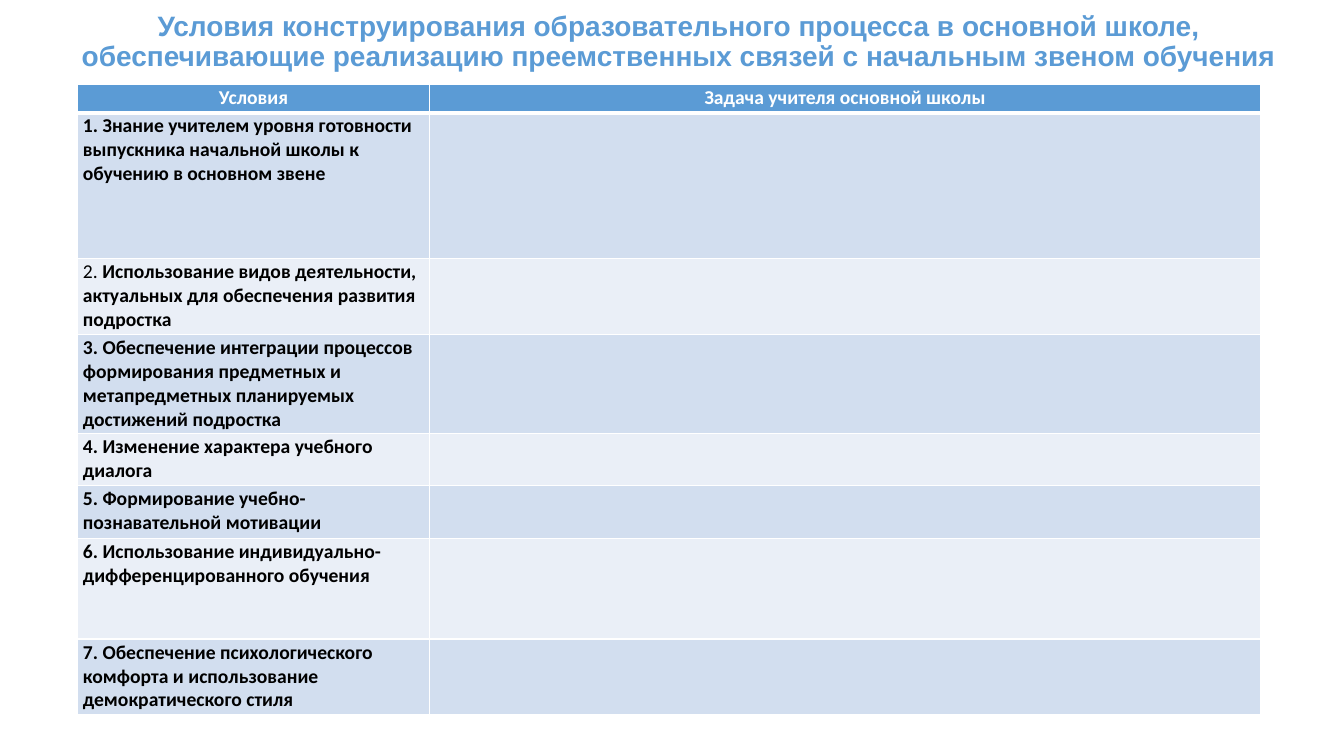
from dataclasses import dataclass

from lxml import etree
from pptx import Presentation
from pptx.dml.color import RGBColor
from pptx.enum.text import PP_ALIGN
from pptx.oxml.ns import qn
from pptx.util import Cm, Pt

LEFT, CENTER = PP_ALIGN.LEFT, PP_ALIGN.CENTER


@dataclass(frozen=True)
class Theme:
    blue: str = "5B9BD5"
    white: str = "FFFFFF"
    black: str = "000000"
    bands: tuple = ("D2DEEF", "EAEFF7")
    head: str = "Arial"
    body: str = "Calibri"
    big: int = 20
    small: int = 14
    thin: int = 1
    thick: int = 3


THEME = Theme()

TITLE = ("Условия конструирования образовательного процесса в основной школе,\v"
         "обеспечивающие реализацию преемственных связей с начальным звеном обучения")
HEADS = ("Условия", "Задача учителя основной школы")
# Row height in cm, then the paragraphs of the condition
TERMS = (
    (3.68, ["1. Знание учителем уровня готовности выпускника начальной школы "
            "к обучению в основном звене"]),
    (1.91, ["2. Использование видов деятельности,",
            "актуальных для обеспечения развития подростка"]),
    (2.49, ["3. Обеспечение интеграции процессов формирования предметных и "
            "метапредметных планируемых достижений подростка"]),
    (1.32, ["4. Изменение характера учебного", "диалога"]),
    (1.32, ["5. Формирование учебно-познавательной мотивации"]),
    (2.54, ["6. Использование индивидуально-дифференцированного обучения"]),
    (1.91, ["7. Обеспечение психологического комфорта и использование "
            "демократического стиля"]),
)
PLAIN = "2. "  # the one number that is not bold
WIDTHS = (8.86, 20.96)
HEAD_H = 0.71


def style(para, face, size, color, align):
    para.alignment = align
    font = para.font
    font.name, font.size, font.bold = face, Pt(size), True
    font.color.rgb = RGBColor.from_string(color)


def add_title(slide):
    box = slide.shapes.add_textbox(Cm(1.7), Cm(0.18), Cm(30.81), Cm(1.47))
    frame = box.text_frame
    frame.word_wrap = True
    para = frame.paragraphs[0]
    para.text = TITLE
    para.line_spacing = 0.9
    style(para, THEME.head, THEME.big, THEME.blue, CENTER)


def edge(cell, side, width):
    line = etree.SubElement(cell._tc.get_or_add_tcPr(), qn(f"a:ln{side}"),
                            w=str(Pt(width)))
    fill = etree.SubElement(line, qn("a:solidFill"))
    etree.SubElement(fill, qn("a:srgbClr"), val=THEME.white)


def dress(cell, color, top, base):
    """Set the margins, borders and fill of a cell."""
    cell.margin_left = cell.margin_right = Cm(0.13)
    cell.margin_top = cell.margin_bottom = Cm(0.04)
    for side, width in zip("LRTB", (THEME.thin, THEME.thin, top, base)):
        edge(cell, side, width)
    cell.fill.solid()
    cell.fill.fore_color.rgb = RGBColor.from_string(color)


def write(cell, lines, color, align):
    frame = cell.text_frame
    for i, line in enumerate(lines):
        para = frame.add_paragraph() if i else frame.paragraphs[0]
        if line.startswith(PLAIN):
            run = para.add_run()
            run.text, run.font.bold = PLAIN, False
            line = line.removeprefix(PLAIN)
        para.add_run().text = line
        style(para, THEME.body, THEME.small, color, align)


def add_terms(slide):
    highs = [HEAD_H] + [high for high, _ in TERMS]
    table = slide.shapes.add_table(
        len(highs), len(WIDTHS), Cm(1.96), Cm(2.13),
        Cm(sum(WIDTHS)), Cm(sum(highs))).table
    for col, width in zip(table.columns, WIDTHS):
        col.width = Cm(width)
    for row, high in zip(table.rows, highs):
        row.height = Cm(high)
    for cell, text in zip(table.rows[0].cells, HEADS):
        dress(cell, THEME.blue, THEME.thin, THEME.thick)
        write(cell, [text], THEME.white, CENTER)
    for i, (_, lines) in enumerate(TERMS):
        cells = table.rows[i + 1].cells
        for cell in cells:
            dress(cell, THEME.bands[i % 2],
                  THEME.thin if i else THEME.thick, THEME.thin)
        write(cells[0], lines, THEME.black, LEFT)


def main():
    deck = Presentation()
    deck.slide_width, deck.slide_height = Cm(33.87), Cm(19.05)
    slide = deck.slides.add_slide(deck.slide_layouts[6])
    add_title(slide)
    add_terms(slide)
    deck.save("out.pptx")


if __name__ == "__main__":
    main()
